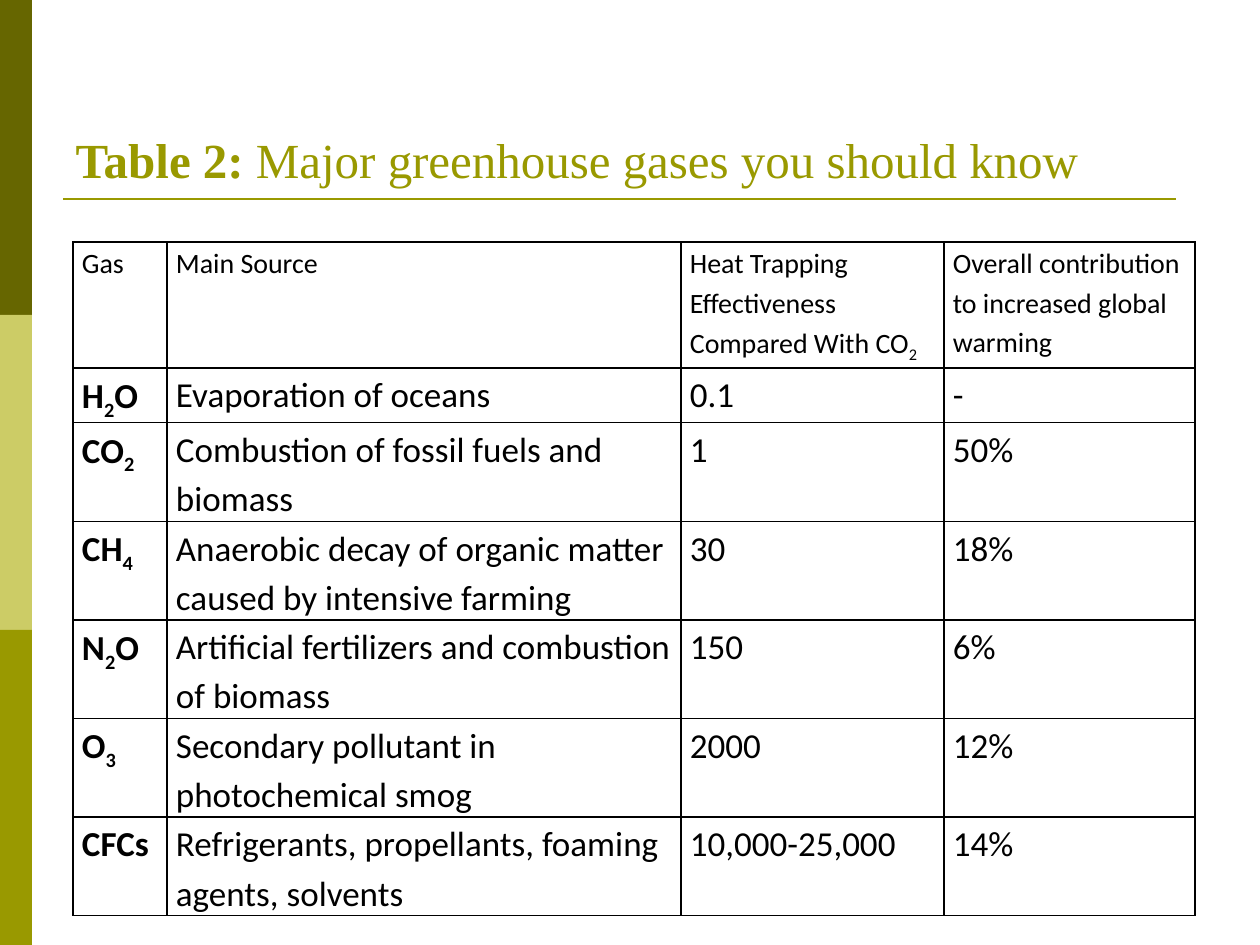
from lxml.etree import SubElement
from pptx import Presentation
from pptx.dml.color import RGBColor
from pptx.enum.shapes import MSO_CONNECTOR, MSO_SHAPE
from pptx.enum.text import MSO_ANCHOR, MSO_AUTO_SIZE, PP_ALIGN
from pptx.oxml.ns import qn
from pptx.util import Pt

TITLE = [("Table 2: ", True), ("Major greenhouse gases you should know", False)]

# Text between bars is subscript.
HEADER = ["Gas", "Main Source", "Heat Trapping Effectiveness Compared With CO|2|",
          "Overall contribution to increased global warming"]
GASES = [
    ("H|2|O", "Evaporation of oceans", "0.1", "-"),
    ("CO|2|", "Combustion of fossil fuels and biomass", "1", "50%"),
    ("CH|4|", "Anaerobic decay of organic matter caused by intensive farming", "30", "18%"),
    ("N|2|O", "Artificial fertilizers and combustion of biomass", "150", "6%"),
    ("O|3|", "Secondary pollutant in photochemical smog", "2000", "12%"),
    ("CFCs", "Refrigerants, propellants, foaming agents, solvents", "10,000-25,000", "14%"),
]
COL_WIDTHS = [94, 514, 263, 251]
ROW_HEIGHTS = [126, 48] + [97] * 5

THEME = {
    "bars": ["666600", "CCCC66", "999900"], "accent": "999900",
    "text": "000000", "border": "000000",
    "title_font": "Times New Roman", "body_font": "Calibri",
    "title_size": 28, "header_size": 16, "body_size": 20,
}


def px(n):
    return round(n * 914400 / 126)


def rgb(name):
    return RGBColor.from_string(name)


def add_text(p, text, *, size, font, color, bold=False):
    """Add runs to p, with the parts between bars as subscript."""
    for i, part in enumerate(text.split("|")):
        if not part:
            continue
        r = p.add_run()
        r.text = part
        r.font.size, r.font.name, r.font.bold = Pt(size), font, bold
        r.font.color.rgb = rgb(color)
        if i % 2:
            r.font._element.set("baseline", "-25000")


def add_borders(cell):
    tcPr = cell._tc.get_or_add_tcPr()
    for i, side in enumerate(("lnL", "lnR", "lnT", "lnB")):
        ln = SubElement(tcPr, qn(f"a:{side}"), w=str(Pt(1)))
        fill = SubElement(ln, qn("a:solidFill"))
        SubElement(fill, qn("a:srgbClr"), val=THEME["border"])
        tcPr.insert(i, ln)


def add_decoration(s):
    for i, color in enumerate(THEME["bars"]):
        bar = s.shapes.add_shape(MSO_SHAPE.RECTANGLE, 0, px(315 * i), px(32), px(315))
        bar.shadow.inherit = False
        bar.fill.solid()
        bar.fill.fore_color.rgb = rgb(color)
        bar.line.fill.background()
    rule = s.shapes.add_connector(MSO_CONNECTOR.STRAIGHT, px(63), px(199), px(1176), px(199))
    rule.line.color.rgb = rgb(THEME["accent"])
    rule.line.width = Pt(1.5)
    SubElement(rule._element.spPr, qn("a:effectLst"))


def add_title(s):
    sp = s.shapes.title
    sp.left, sp.top, sp.width, sp.height = px(63), px(38), px(1134), px(157)
    tf = sp.text_frame
    tf.auto_size = MSO_AUTO_SIZE.NONE
    tf.vertical_anchor = MSO_ANCHOR.BOTTOM
    p = tf.paragraphs[0]
    p.alignment = PP_ALIGN.LEFT
    for text, bold in TITLE:
        add_text(p, text, size=THEME["title_size"], font=THEME["title_font"],
                 color=THEME["accent"], bold=bold)


def add_gas_table(s):
    rows = [HEADER, *GASES]
    table = s.shapes.add_table(len(rows), len(HEADER), px(73), px(242),
                               px(sum(COL_WIDTHS)), px(sum(ROW_HEIGHTS))).table
    table.first_row = table.horz_banding = False
    for col, width in zip(table.columns, COL_WIDTHS):
        col.width = px(width)
    for row, height in zip(table.rows, ROW_HEIGHTS):
        row.height = px(height)
    for i, texts in enumerate(rows):
        for j, text in enumerate(texts):
            cell = table.cell(i, j)
            cell.margin_left = cell.margin_right = px(9)
            cell.margin_top = cell.margin_bottom = 0
            cell.fill.background()
            add_borders(cell)
            p = cell.text_frame.paragraphs[0]
            p.line_spacing, p.space_after = 1.15, Pt(10)
            add_text(p, text, size=THEME["body_size" if i else "header_size"],
                     font=THEME["body_font"], color=THEME["text"],
                     bold=i > 0 and j == 0)


def main():
    prs = Presentation()
    prs.slide_width, prs.slide_height = px(1260), px(945)
    s = prs.slides.add_slide(prs.slide_layouts[5])
    add_decoration(s)
    add_title(s)
    add_gas_table(s)
    prs.save("out.pptx")


if __name__ == "__main__":
    main()
